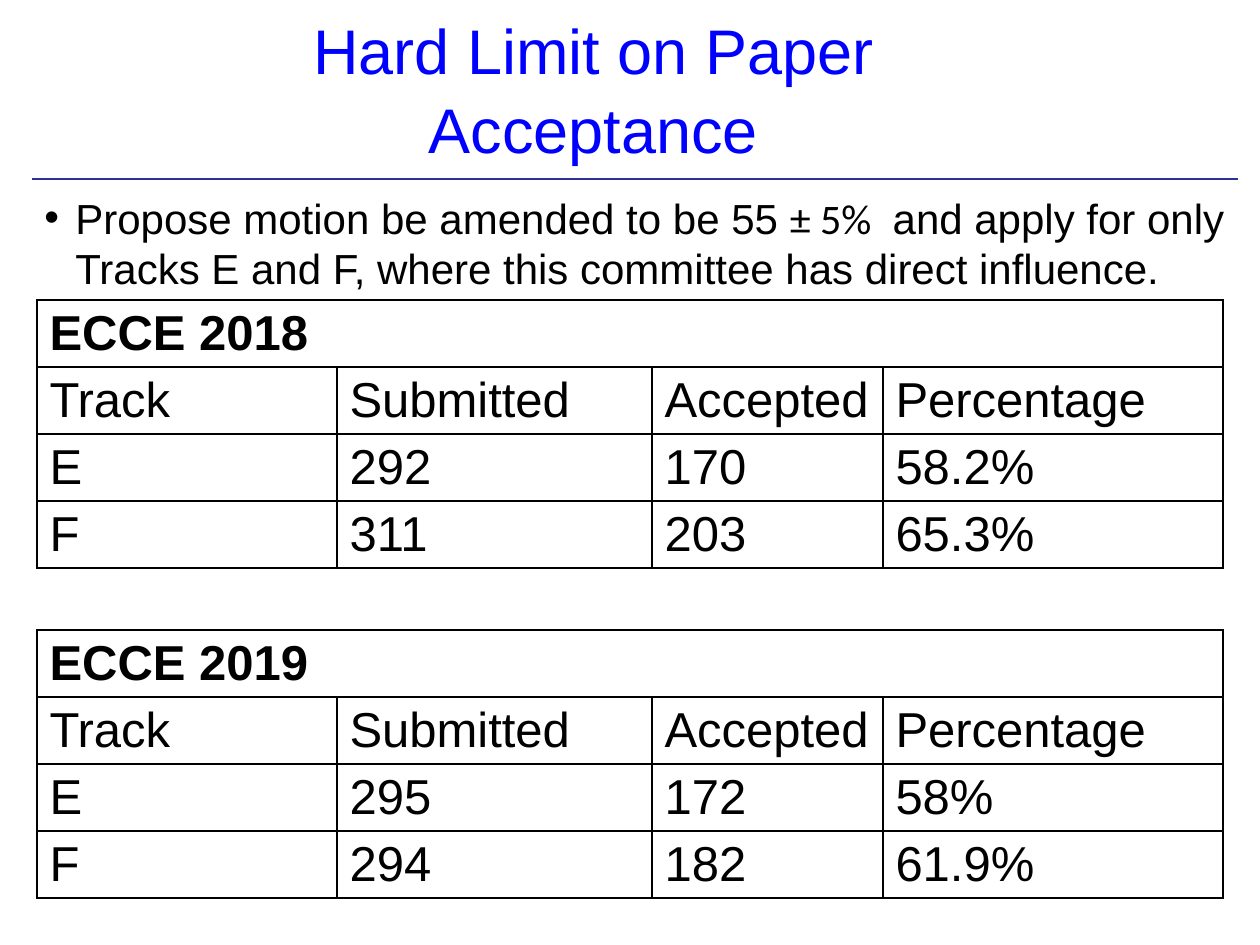
from dataclasses import dataclass

from lxml import etree
from pptx import Presentation
from pptx.dml.color import RGBColor
from pptx.enum.shapes import MSO_CONNECTOR
from pptx.enum.text import MSO_ANCHOR, PP_ALIGN
from pptx.oxml.ns import qn
from pptx.util import Pt

EMU_PER_PX = 914400 / 126
STRAIGHT = MSO_CONNECTOR.STRAIGHT
MIDDLE, TOP = MSO_ANCHOR.MIDDLE, MSO_ANCHOR.TOP
CENTER, LEFT = PP_ALIGN.CENTER, PP_ALIGN.LEFT


@dataclass(frozen=True)
class Theme:
    title: str = "0000FF"
    text: str = "000000"
    rule: str = "2F2F98"
    border: str = "000000"
    title_size: int = 36
    body_size: int = 24
    table_size: int = 28
    rule_width: float = 1.5
    border_width: int = 1
    font: str = "Arial"
    alt_font: str = "Calibri"


@dataclass(frozen=True)
class TrackTable:
    top: int
    heading: str
    rows: tuple[tuple[str, ...], ...]


THEME = Theme()
TABLE_LEFT = 37
ROW_HEIGHT = 67
CELL_MARGIN = 4
COLUMNS = (300, 315, 231, 340)
HEADER = ("Track", "Submitted", "Accepted", "Percentage")
TABLES = (
    TrackTable(630, "ECCE 2019", (("E", "295", "172", "58%"), ("F", "294", "182", "61.9%"))),
    TrackTable(300, "ECCE 2018", (("E", "292", "170", "58.2%"), ("F", "311", "203", "65.3%"))),
)
BODY_RUNS = (
    ("Propose motion be amended to be 55 ", THEME.font),
    ("± 5% ", THEME.alt_font),
    (" and apply for only Tracks E and F, where this committee has direct influence.", THEME.font),
)


def px(n: int) -> int:
    return round(n * EMU_PER_PX)


def add_run(p, text: str, size: int, color: str, font: str = THEME.font, bold: bool = False) -> None:
    r = p.add_run()
    r.text = text
    r.font.size = Pt(size)
    r.font.name = font
    r.font.bold = bold
    r.font.color.rgb = RGBColor.from_string(color)


def add_box(slide, left: int, top: int, width: int, height: int, anchor, align):
    sp = slide.shapes.add_textbox(px(left), px(top), px(width), px(height))
    tf = sp.text_frame
    tf.word_wrap = True
    tf.vertical_anchor = anchor
    p = tf.paragraphs[0]
    p.alignment = align
    return tf, p


def add_bullet(p, margin: int, indent: int) -> None:
    pPr = p._p.get_or_add_pPr()
    pPr.set("marL", str(px(margin)))
    pPr.set("indent", str(px(indent)))
    font = etree.SubElement(pPr, qn("a:buFont"))
    font.set("typeface", THEME.font)
    etree.SubElement(pPr, qn("a:buChar")).set("char", "•")


def add_rule(slide, left: int, right: int, y: int) -> None:
    ln = slide.shapes.add_connector(STRAIGHT, px(left), px(y), px(right), px(y))
    ln.line.color.rgb = RGBColor.from_string(THEME.rule)
    ln.line.width = Pt(THEME.rule_width)
    etree.SubElement(ln._element.spPr, qn("a:effectLst"))


def set_borders(cell) -> None:
    tcPr = cell._tc.get_or_add_tcPr()
    for i, side in enumerate(("a:lnL", "a:lnR", "a:lnT", "a:lnB")):
        ln = etree.Element(qn(side), w=str(Pt(THEME.border_width)))
        fill = etree.SubElement(ln, qn("a:solidFill"))
        etree.SubElement(fill, qn("a:srgbClr"), val=THEME.border)
        tcPr.insert(i, ln)


def add_track_table(slide, spec: TrackTable) -> None:
    rows = ((spec.heading, "", "", ""), HEADER, *spec.rows)
    frame = slide.shapes.add_table(
        len(rows), len(COLUMNS), px(TABLE_LEFT), px(spec.top),
        px(sum(COLUMNS)), px(ROW_HEIGHT * len(rows)),
    )
    table = frame.table
    table.first_row = table.horz_banding = False
    for column, width in zip(table.columns, COLUMNS):
        column.width = px(width)
    for i, values in enumerate(rows):
        table.rows[i].height = px(ROW_HEIGHT)
        for j, value in enumerate(values):
            cell = table.cell(i, j)
            cell.fill.background()
            cell.margin_top = cell.margin_bottom = px(CELL_MARGIN)
            cell.vertical_anchor = MIDDLE
            set_borders(cell)
            if value:
                add_run(cell.text_frame.paragraphs[0], value, THEME.table_size, THEME.text, bold=i == 0)
    table.cell(0, 0).merge(table.cell(0, len(COLUMNS) - 1))


def main() -> None:
    prs = Presentation()
    prs.slide_width, prs.slide_height = px(1260), px(945)
    slide = prs.slides.add_slide(prs.slide_layouts[6])

    add_rule(slide, 32, 1238, 179)
    for spec in TABLES:
        add_track_table(slide, spec)

    tf, p = add_box(slide, 252, 4, 683, 158, MIDDLE, CENTER)
    tf.margin_top = px(14)
    p.line_spacing = 1.05
    add_run(p, "Hard Limit on Paper Acceptance", THEME.title_size, THEME.title)

    tf, p = add_box(slide, -31, 186, 1270, 115, TOP, LEFT)
    add_bullet(p, 94, -31)
    p.space_after = Pt(12)
    for text, font in BODY_RUNS:
        add_run(p, text, THEME.body_size, THEME.text, font)

    prs.save("out.pptx")


if __name__ == "__main__":
    main()
